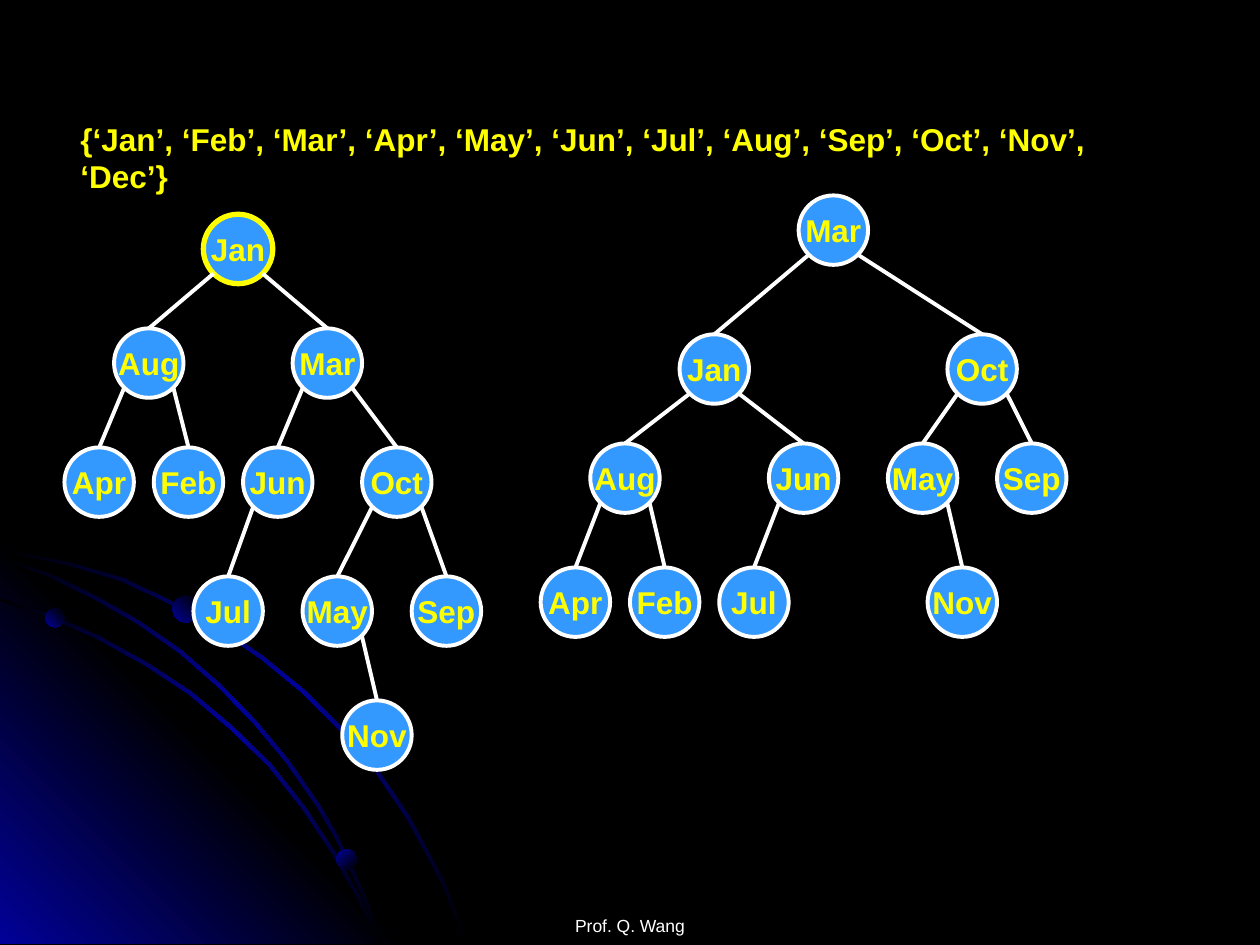
import copy

import pptx
import pptx.dml.color
import pptx.enum.shapes
import pptx.enum.text
import pptx.oxml
import pptx.oxml.ns
import pptx.util
from dataclasses import dataclass

ANCHOR = pptx.enum.text.MSO_ANCHOR
ALIGN = pptx.enum.text.PP_ALIGN
OVAL = pptx.enum.shapes.MSO_SHAPE.OVAL
STRAIGHT = pptx.enum.shapes.MSO_CONNECTOR.STRAIGHT


@dataclass(frozen=True)
class Theme:
    """Colours, font and sizes of the slide."""
    black: str = "000000"
    glow: str = "010199"
    node: str = "3399FF"
    edge: str = "FFFFFF"
    accent: str = "FFFF00"
    font: str = "Arial"
    label_size: int = 18
    footer_size: int = 10
    line_width: float = 2.25
    root_width: float = 3


THEME = Theme()
NODE_SPAN = 7
DIAGONAL = 0.5 ** 0.5 / 2

# month: (column, row, parent)
UNBALANCED = {
    "Jan": (14, 0, None), "Aug": (5, 11.5, "Jan"), "Mar": (23, 11.5, "Jan"),
    "Apr": (0, 23.5, "Aug"), "Feb": (9, 23.5, "Aug"),
    "Jun": (18, 23.5, "Mar"), "Oct": (30, 23.5, "Mar"),
    "Jul": (13, 36.5, "Jun"), "May": (24, 36.5, "Oct"),
    "Sep": (35, 36.5, "Oct"), "Nov": (28, 49, "May"),
}
BALANCED = {
    "Mar": (26, 0, None), "Jan": (14, 14, "Mar"), "Oct": (41, 14, "Mar"),
    "Aug": (5, 25, "Jan"), "Jun": (23, 25, "Jan"),
    "May": (35, 25, "Oct"), "Sep": (46, 25, "Oct"),
    "Apr": (0, 37.5, "Aug"), "Feb": (9, 37.5, "Aug"),
    "Jul": (18, 37.5, "Jun"), "Nov": (39, 37.5, "May"),
}
ARCS = [
    [(0, 43.5), (5.7, 44.7), (9.8, 45.9), (13.6, 47.7), (17.4, 49.7),
     (20.9, 52.1), (24.2, 54.8), (27.2, 57.8), (30, 61.1), (32.5, 64.8),
     (35.2, 69.8), (37.2, 74.9)],
    [(0, 47.5), (4.1, 48.8), (7.9, 50.5), (11.7, 52.6), (15.2, 54.9),
     (18.4, 57.6), (21.5, 60.6), (24.2, 64), (26.6, 67.6), (28.6, 71.2),
     (30.3, 74.9)],
    [(0, 44.2), (3.9, 45.5), (7.6, 47.3), (11.1, 49.3), (14.4, 51.6),
     (17.5, 54.3), (20.4, 57.3), (22.9, 60.3), (25.4, 63.9), (26.9, 66.5),
     (28.2, 69.3), (29.4, 72), (30.3, 74.9)],
]
CORNER = [(0, 42.7), (32.2, 74.9), (0, 74.9)]
DOTS = [(3.6, 48.3, 1.5, 45), (26.7, 67.4, 1.6, 315), (13.7, 47.3, 2.1, 45)]


def rgb(code):
    """Return a colour object for a hex code."""
    return pptx.dml.color.RGBColor.from_string(code)


def paint_gradient(shape, colours, angle):
    """Fill a shape with evenly spaced gradient colours and no outline."""
    shape.shadow.inherit = False
    shape.line.fill.background()
    shape.fill.gradient()
    shape.fill.gradient_angle = angle
    stops = shape.fill._xPr.find(".//" + pptx.oxml.ns.qn("a:gsLst"))
    while len(stops) < len(colours):
        stops.append(copy.deepcopy(stops[-1]))
    for index, (stop, colour) in enumerate(zip(shape.fill.gradient_stops, colours)):
        stop.position = index / (len(colours) - 1)
        stop.color.rgb = rgb(colour)


def style_text(frame, text, size, colour, bold=False, align=ALIGN.LEFT):
    """Write one paragraph and format its run."""
    frame.text = text
    paragraph = frame.paragraphs[0]
    paragraph.alignment = align
    font = paragraph.runs[0].font
    font.name, font.size, font.bold = THEME.font, pptx.util.Pt(size), bold
    font.color.rgb = rgb(colour)


def draw_outline(slide, points, percent):
    """Draw a closed outline from points in percent of the slide width."""
    corners = [(int(x * percent), int(y * percent)) for x, y in points]
    builder = slide.shapes.build_freeform(*corners[0])
    builder.add_line_segments(corners[1:], close=True)
    return builder.convert_to_shape()


def draw_backdrop(slide, width):
    """Draw the glowing corner, its arcs and dots over the slide."""
    percent = width / 100
    slide.background.fill.solid()
    slide.background.fill.fore_color.rgb = rgb(THEME.black)

    def draw_arc(upper):
        lower = [(max(0, x - 0.2), min(74.9, y + 0.2)) for x, y in reversed(upper)]
        arc = draw_outline(slide, upper + lower, percent)
        paint_gradient(arc, [THEME.black, THEME.glow, THEME.black], 315)

    draw_arc(ARCS[0])
    corner = draw_outline(slide, CORNER, percent)
    paint_gradient(corner, [THEME.glow, THEME.black, THEME.glow], 45)
    for upper in ARCS[1:]:
        draw_arc(upper)
    for x, y, size, angle in DOTS:
        box = [int(value * percent) for value in (x, y, size, size)]
        dot = slide.shapes.add_shape(OVAL, *box)
        paint_gradient(dot, [THEME.glow, THEME.black], angle)


def draw_edge(slide, start, end):
    """Draw one branch between two points."""
    branch = slide.shapes.add_connector(STRAIGHT, *map(int, start + end))
    branch.line.color.rgb = rgb(THEME.edge)
    branch.line.width = pptx.util.Pt(THEME.line_width)
    branch._element.spPr.append(pptx.oxml.parse_xml(
        "<a:effectLst %s/>" % pptx.oxml.ns.nsdecls("a")))


def draw_node(slide, month, left, top, size, highlighted):
    """Draw one month circle."""
    circle = slide.shapes.add_shape(OVAL, *map(int, (left, top, size, size)))
    circle.shadow.inherit = False
    circle.fill.solid()
    circle.fill.fore_color.rgb = rgb(THEME.node)
    circle.line.color.rgb = rgb(THEME.accent if highlighted else THEME.edge)
    circle.line.width = pptx.util.Pt(
        THEME.root_width if highlighted else THEME.line_width)
    circle.text_frame.word_wrap = False
    circle.text_frame.vertical_anchor = ANCHOR.MIDDLE
    style_text(circle.text_frame, month, THEME.label_size, THEME.accent,
               True, ALIGN.CENTER)


def draw_tree(slide, months, left, top, cell, highlighted=None):
    """Draw a search tree on a grid whose corner is at left, top."""
    size = NODE_SPAN * cell
    places = {month: (left + column * cell, top + row * cell)
              for month, (column, row, _) in months.items()}
    for month, (x, y) in places.items():
        parent = months[month][2]
        if parent:
            parent_x, parent_y = places[parent]
            side = 1 if x > parent_x else -1
            start = (parent_x + size * (0.5 + side * DIAGONAL),
                     parent_y + size * (0.5 + DIAGONAL))
            draw_edge(slide, start, (x + size / 2, y))
        draw_node(slide, month, x, y, size, month == highlighted)


def draw_caption(slide, box, text, size, colour, bold, align, anchor):
    """Place one line of wrapping text in a box."""
    caption = slide.shapes.add_textbox(*map(int, box)).text_frame
    caption.word_wrap = True
    caption.vertical_anchor = anchor
    if anchor == ANCHOR.BOTTOM:
        caption.margin_bottom = 0
    style_text(caption, text, size, colour, bold, align)


def main():
    """Build and save the slide."""
    deck = pptx.Presentation()
    deck.slide_width, deck.slide_height = pptx.util.Inches(10), pptx.util.Inches(7.5)
    width, height = deck.slide_width, deck.slide_height
    slide = deck.slides.add_slide(deck.slide_layouts[6])
    cell = width / 127
    draw_backdrop(slide, width)
    draw_caption(slide, (width * 0.34, height * 0.92, width * 0.32, height * 0.07),
                 "Prof. Q. Wang", THEME.footer_size, THEME.edge, False,
                 ALIGN.CENTER, ANCHOR.BOTTOM)
    draw_tree(slide, UNBALANCED, 6.5 * cell, 21.6 * cell, cell, "Jan")
    draw_tree(slide, BALANCED, 54.5 * cell, 19.7 * cell, cell)
    draw_caption(slide, (width * 0.054, height * 0.12, width * 0.89, height * 0.05),
                 "{‘Jan’, ‘Feb’, ‘Mar’, ‘Apr’, ‘May’, ‘Jun’, ‘Jul’, ‘Aug’, "
                 "‘Sep’, ‘Oct’, ‘Nov’, ‘Dec’}",
                 THEME.label_size, THEME.accent, True, ALIGN.LEFT, ANCHOR.TOP)
    deck.save("out.pptx")


if __name__ == "__main__":
    main()
